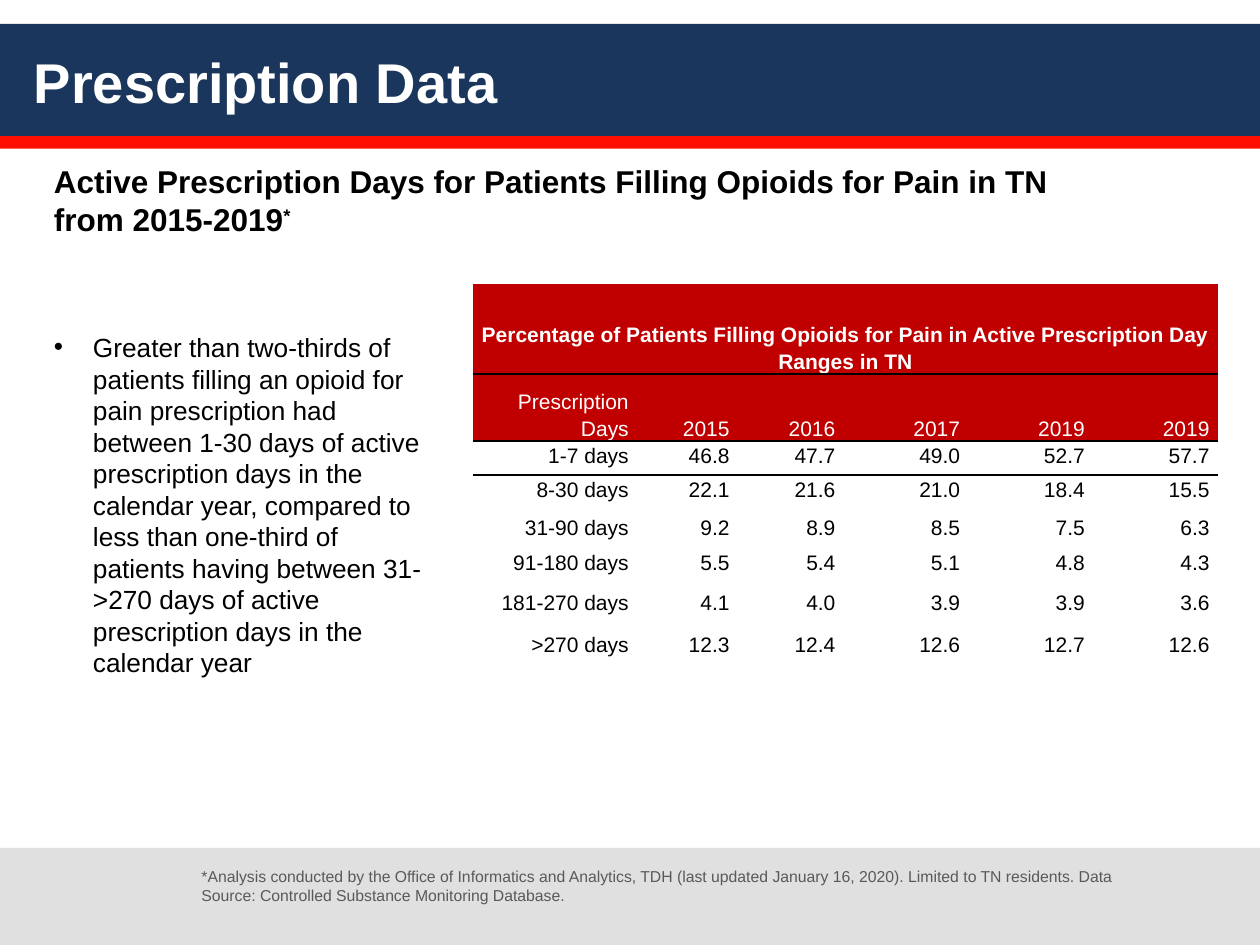
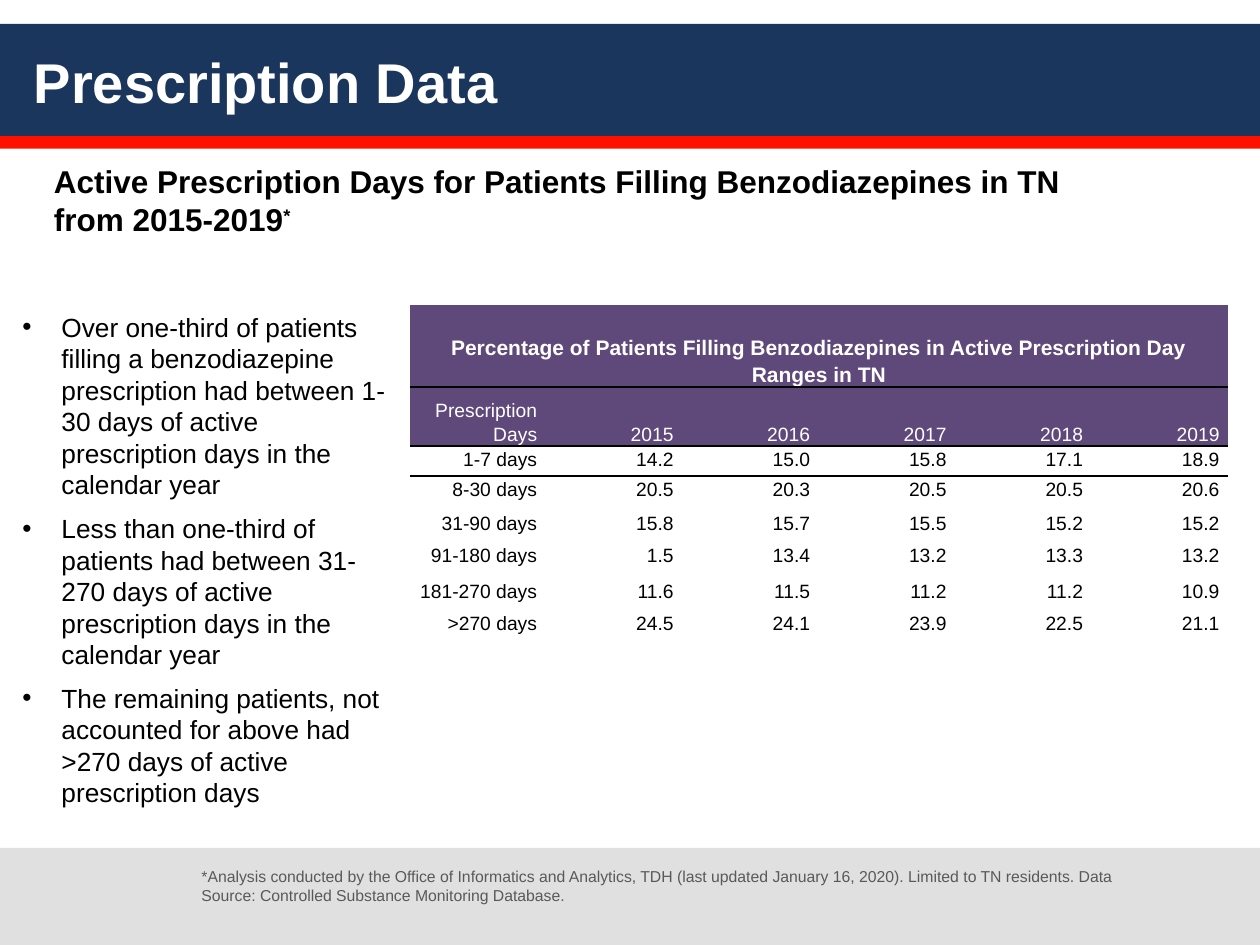
"""Build two slides on active prescription days in TN, each with bullets and a table."""
import lxml.etree
import pptx
import pptx.dml.color
import pptx.enum.shapes
import pptx.enum.text
import pptx.oxml.ns
import pptx.util

Inches = pptx.util.Inches
Pt = pptx.util.Pt
qn = pptx.oxml.ns.qn
ANCHOR = pptx.enum.text.MSO_ANCHOR
ALIGN = pptx.enum.text.PP_ALIGN
AUTO_SIZE = pptx.enum.text.MSO_AUTO_SIZE

FONT = "Arial"
NAVY, RED, GRAY = "1B365D", "FF0F00", "E0E0E0"
WHITE, BLACK, NOTE_GRAY = "FFFFFF", "000000", "595959"
NO_TABLE_STYLE = "{2D5ABB26-0587-4C30-8999-92F81FD0307C}"

BANDS = [(0.19, 0.89, NAVY), (1.08, 0.1, RED), (6.73, 0.77, GRAY)]
TITLE = "Prescription Data"
FOOTNOTE = (
    "*Analysis conducted by the Office of Informatics and Analytics, TDH "
    "(last updated January 16, 2020). Limited to TN residents. "
    "Data Source: Controlled Substance Monitoring Database."
)
DAY_RANGES = ["1-7 days", "8-30 days", "31-90 days", "91-180 days", "181-270 days", ">270 days"]

DRUGS = [
    {
        "heading": "Active Prescription Days for Patients Filling Opioids for Pain in TN from 2015-2019",
        "bullets": [
            "Greater than two-thirds of patients filling an opioid for pain prescription had "
            "between 1-30 days of active prescription days in the calendar year, compared to "
            "less than one-third of patients having between 31->270 days of active "
            "prescription days in the calendar year",
        ],
        "bullets_at": (0.33, 2.58, 3.17, 3.11),
        "caption": "Percentage of Patients Filling Opioids for Pain in Active Prescription Day Ranges in TN",
        "table_at": (3.75, 2.25, 5.92, 3.05),
        "columns": [1.31, 0.8, 0.84, 0.99, 0.99, 0.99],
        "rows": [0.72, 0.53, 0.27, 0.3, 0.28, 0.32, 0.33, 0.3],
        "fill": "C00000",
        "size": 12,
        "years": [2015, 2016, 2017, 2019, 2019],
        "shares": [
            [46.8, 47.7, 49.0, 52.7, 57.7],
            [22.1, 21.6, 21.0, 18.4, 15.5],
            [9.2, 8.9, 8.5, 7.5, 6.3],
            [5.5, 5.4, 5.1, 4.8, 4.3],
            [4.1, 4.0, 3.9, 3.9, 3.6],
            [12.3, 12.4, 12.6, 12.7, 12.6],
        ],
    },
    {
        "heading": "Active Prescription Days for Patients Filling Benzodiazepines in TN from 2015-2019",
        "bullets": [
            "Over one-third of patients filling a benzodiazepine prescription had between "
            "1-30 days of active prescription days in the calendar year",
            "Less than one-third of patients had between 31-270 days of active prescription "
            "days in the calendar year",
            "The remaining patients, not accounted for above had >270 days of active "
            "prescription days",
        ],
        "bullets_at": (0.08, 2.42, 3.17, 4.09),
        "caption": "Percentage of Patients Filling Benzodiazepines in Active Prescription Day Ranges in TN",
        "table_at": (3.25, 2.42, 6.5, 2.68),
        "columns": [6.5 / 6] * 6,
        "rows": [0.65, 0.47, 0.24, 0.27, 0.25, 0.29, 0.25, 0.27],
        "fill": "5F497A",
        "size": 11,
        "years": [2015, 2016, 2017, 2018, 2019],
        "shares": [
            [14.2, 15.0, 15.8, 17.1, 18.9],
            [20.5, 20.3, 20.5, 20.5, 20.6],
            [15.8, 15.7, 15.5, 15.2, 15.2],
            [1.5, 13.4, 13.2, 13.3, 13.2],
            [11.6, 11.5, 11.2, 11.2, 10.9],
            [24.5, 24.1, 23.9, 22.5, 21.1],
        ],
    },
]


def color(value):
    return pptx.dml.color.RGBColor.from_string(value)


def add_span(para, text, size, text_color, bold=False):
    span = para.add_run()
    span.text = text
    span.font.name = FONT
    span.font.size = Pt(size)
    span.font.bold = bold
    span.font.color.rgb = color(text_color)
    return span


deck = pptx.Presentation()
deck.slide_width = Inches(10)
deck.slide_height = Inches(7.5)

for drug in DRUGS:
    page = deck.slides.add_slide(deck.slide_layouts[6])

    for top, height, band_color in BANDS:
        band = page.shapes.add_shape(
            pptx.enum.shapes.MSO_SHAPE.RECTANGLE, 0, Inches(top), deck.slide_width, Inches(height)
        )
        band.shadow.inherit = False
        band.fill.solid()
        band.fill.fore_color.rgb = color(band_color)
        band.line.fill.background()

    frames = []
    for place in [(0.17, 0.19, 9.67, 0.9), (0.33, 1.24, 8.67, 0.71), drug["bullets_at"], (1.5, 6.83, 7.58, 0.4)]:
        box = page.shapes.add_textbox(*[Inches(length) for length in place])
        box.text_frame.word_wrap = True
        box.text_frame.auto_size = AUTO_SIZE.SHAPE_TO_FIT_TEXT
        frames.append(box.text_frame)
    title, heading, bullets, footnote = frames

    title.auto_size = AUTO_SIZE.NONE
    title.vertical_anchor = ANCHOR.MIDDLE
    add_span(title.paragraphs[0], TITLE, 32, WHITE, True)
    add_span(heading.paragraphs[0], drug["heading"], 18, BLACK, True)
    star = add_span(heading.paragraphs[0], "*", 18, BLACK, True)
    star.font._element.set("baseline", "30000")
    add_span(footnote.paragraphs[0], FOOTNOTE, 9, NOTE_GRAY)

    for index, text in enumerate(drug["bullets"]):
        para = bullets.add_paragraph() if index else bullets.paragraphs[0]
        properties = para._p.get_or_add_pPr()
        properties.set("marL", str(Inches(0.31)))
        properties.set("indent", str(Inches(-0.31)))
        lxml.etree.SubElement(properties, qn("a:buFont")).set("typeface", FONT)
        lxml.etree.SubElement(properties, qn("a:buChar")).set("char", "•")
        if index:
            para.space_before = Pt(7)
        add_span(para, text, 15, BLACK)

    cell_texts = [[drug["caption"]] + [""] * 5, ["Prescription Days"] + drug["years"]]
    for day_range, shares in zip(DAY_RANGES, drug["shares"]):
        cell_texts.append([day_range] + [f"{share:.1f}" for share in shares])

    graphic = page.shapes.add_table(
        len(drug["rows"]), len(drug["columns"]), *[Inches(length) for length in drug["table_at"]]
    )
    graphic._element.find(".//" + qn("a:tableStyleId")).text = NO_TABLE_STYLE
    table = graphic.table
    table.first_row = False
    table.horz_banding = False
    for column, width in zip(table.columns, drug["columns"]):
        column.width = Inches(width)
    for row, height in zip(table.rows, drug["rows"]):
        row.height = Inches(height)
    table.cell(0, 0).merge(table.cell(0, 5))

    for row_index, texts in enumerate(cell_texts):
        is_caption, is_header = row_index == 0, row_index < 2
        borders = {0: ["a:lnB"], 1: ["a:lnT", "a:lnB"], 2: ["a:lnT"]}.get(row_index, [])
        for column_index, text in enumerate(texts):
            cell = table.cell(row_index, column_index)
            cell.margin_left = cell.margin_right = Inches(0.07)
            cell.margin_top = cell.margin_bottom = 0
            cell.vertical_anchor = ANCHOR.BOTTOM if is_header else ANCHOR.TOP
            for border in borders:
                line = lxml.etree.SubElement(cell._tc.get_or_add_tcPr(), qn(border), w=str(Pt(1)))
                solid = lxml.etree.SubElement(line, qn("a:solidFill"))
                lxml.etree.SubElement(solid, qn("a:srgbClr"), val=BLACK)
            if is_header:
                cell.fill.solid()
                cell.fill.fore_color.rgb = color(drug["fill"])
            else:
                cell.fill.background()
            if cell.is_spanned:
                continue
            para = cell.text_frame.paragraphs[0]
            para.line_spacing = 1.15
            para.alignment = ALIGN.CENTER if is_caption else ALIGN.RIGHT
            para.space_after = Pt(0 if is_caption else 1.8)
            size = 12 if is_caption else drug["size"]
            add_span(para, str(text), size, WHITE if is_header else BLACK, is_caption)

deck.save("out.pptx")
